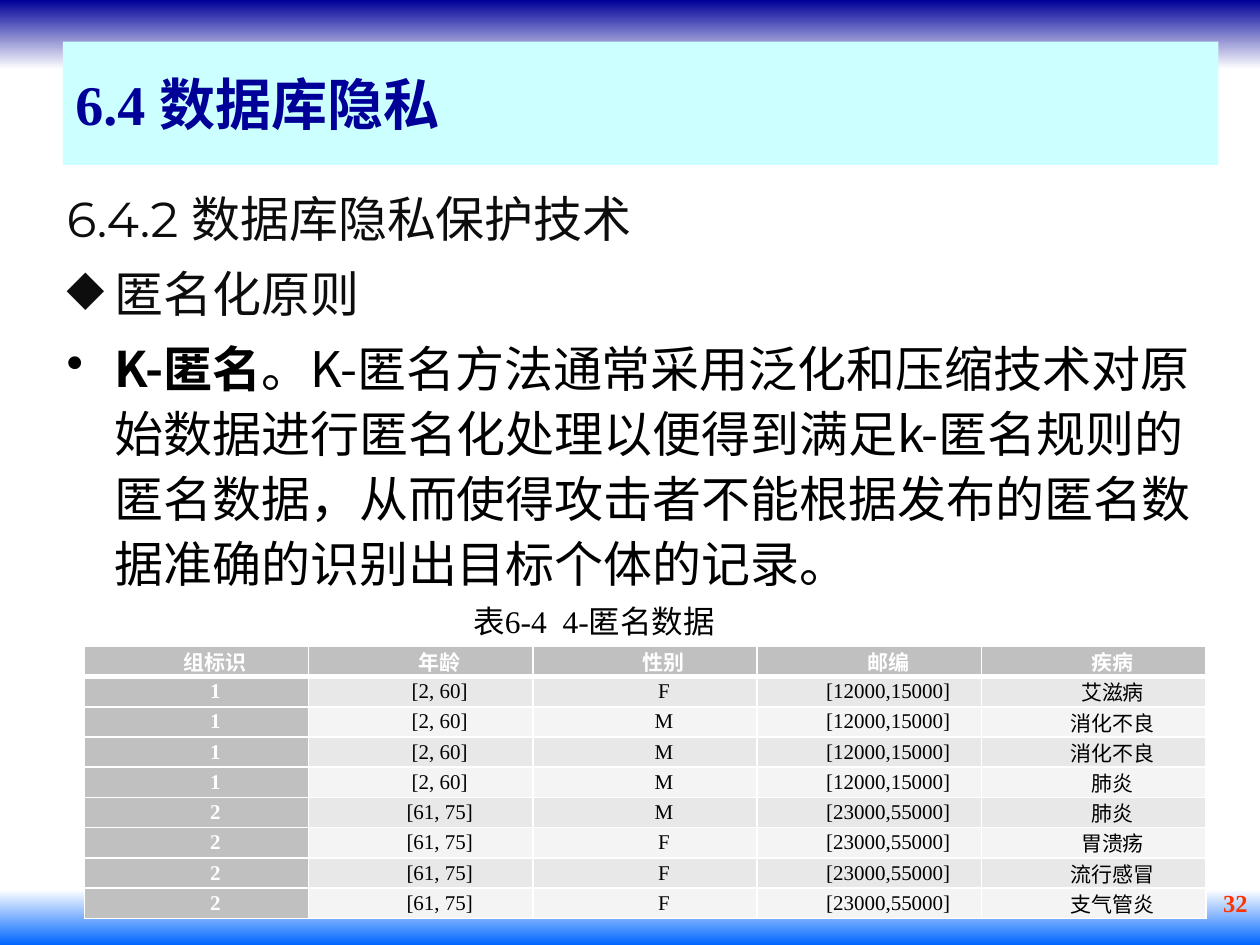
from pptx import Presentation
from pptx.util import Inches, Pt
from pptx.dml.color import RGBColor
from pptx.enum.shapes import MSO_SHAPE
from pptx.enum.text import MSO_ANCHOR, PP_ALIGN
from pptx.oxml.ns import qn
from lxml import etree

RECT = MSO_SHAPE.RECTANGLE
MIDDLE = MSO_ANCHOR.MIDDLE
CENTER, RIGHT = PP_ALIGN.CENTER, PP_ALIGN.RIGHT
SERIF, SANS, CJK = "Times New Roman", "Montserrat", "Noto Sans CJK SC"

prs = Presentation()
prs.slide_width, prs.slide_height = Inches(10), Inches(7.5)
COL, ROW = prs.slide_width / 100, prs.slide_height / 75
slide = prs.slides.add_slide(prs.slide_layouts[6])


def grid(left, top, width, height):
    return int(left * COL), int(top * ROW), int(width * COL), int(height * ROW)


def style(paragraph, face, size, color, bold=False):
    font = paragraph.font
    font.name, font.size, font.bold = face, Pt(size), bold
    font.color.rgb = RGBColor.from_string(color)


for top, height, colors in [(0, 5.5, ("000099", "FFFFFF")),
                            (70.6, 4.4, ("FFFFFF", "0066FF"))]:
    band = slide.shapes.add_shape(RECT, *grid(0, top, 100, height))
    band.shadow.inherit = False
    band.line.fill.background()
    band.fill.gradient()
    band.fill.gradient_angle = 270
    for stop, color in zip(band.fill.gradient_stops, colors):
        stop.color.rgb = RGBColor.from_string(color)

page = slide.shapes.add_textbox(*grid(70.5, 70, 29.5, 5)).text_frame
page.word_wrap = True
page.text = "32"
page.paragraphs[0].alignment = RIGHT
style(page.paragraphs[0], SERIF, 14, "FF3300", True)

title = slide.shapes.add_textbox(*grid(5, 3.3, 91.7, 9.8))
title.fill.solid()
title.fill.fore_color.rgb = RGBColor.from_string("CCFFFF")
title.text_frame.word_wrap = True
title.text_frame.vertical_anchor = MIDDLE
title.text_frame.text = "6.4 数据库隐私"
style(title.text_frame.paragraphs[0], SERIF, 32, "000099", True)

body = slide.shapes.add_textbox(*grid(4.3, 14, 93.9, 55.6)).text_frame
body.word_wrap = True
points = [
    ("", SANS, "0D0D0D", ["6.4.2 数据库隐私保护技术"]),
    ("◆", SANS, "0D0D0D", ["匿名化原则"]),
    ("•", CJK, "000000", [
        "K-匿名",
        "。K-匿名方法通常采用泛化和压缩技术对原始数据进行匿名化处理以便得到满足k-匿名规则的"
        "匿名数据，从而使得攻击者不能根据发布的匿名数据准确的识别出目标个体的记录。"]),
]
for index, (bullet, face, color, parts) in enumerate(points):
    point = body.add_paragraph() if index else body.paragraphs[0]
    point.line_spacing = Pt(37)
    point.space_before = Pt(6 if index else 0)
    if bullet:
        props = point._p.get_or_add_pPr()
        props.set("marL", str(Inches(0.38)))
        props.set("indent", str(-Inches(0.38)))
        etree.SubElement(props, qn("a:buChar"), char=bullet)
    style(point, face, 28, color)
    for part in parts:
        point.add_run().text = part
body.paragraphs[2].runs[0].font.bold = True

header = ["组标识", "年龄", "性别", "邮编", "疾病"]
groups = {"1": ("[2, 60]", "[12000,15000]"), "2": ("[61, 75]", "[23000,55000]")}
patients = [("1", "F", "艾滋病"), ("1", "M", "消化不良"), ("1", "M", "消化不良"),
            ("1", "M", "肺炎"), ("2", "M", "肺炎"), ("2", "F", "胃溃疡"),
            ("2", "F", "流行感冒"), ("2", "F", "支气管炎")]
records = [header] + [[group, groups[group][0], sex, groups[group][1], disease]
                      for group, sex, disease in patients]

table = slide.shapes.add_table(len(records), len(header),
                               *grid(6.7, 51.3, 89, 2.4 * len(records))).table
for r, record in enumerate(records):
    for c, value in enumerate(record):
        cell = table.cell(r, c)
        heading = r == 0 or c == 0
        cell.margin_top = cell.margin_bottom = 0
        cell.margin_left = cell.margin_right = Inches(0.08)
        cell.vertical_anchor = MIDDLE
        cell.text = value
        entry = cell.text_frame.paragraphs[0]
        entry.alignment = CENTER
        entry._p.get_or_add_pPr().set("indent", str(Inches(0.3)))
        style(entry, SERIF, 12, "FFFFFF" if heading else "000000", heading)
        for side in "LRTB":
            thick = (r, side) in [(0, "B"), (1, "T")]
            edge = etree.SubElement(cell._tc.get_or_add_tcPr(), qn("a:ln" + side),
                                    w=str(Pt(3 if thick else 1)))
            paint = etree.SubElement(edge, qn("a:solidFill"))
            etree.SubElement(paint, qn("a:srgbClr"), val="FFFFFF")
        cell.fill.solid()
        shade = "C0C0C0" if heading else "E8E8E8" if r % 2 else "F4F4F4"
        cell.fill.fore_color.rgb = RGBColor.from_string(shade)

caption = slide.shapes.add_textbox(*grid(23.2, 47.3, 44.9, 4)).text_frame
caption.word_wrap = True
caption.vertical_anchor = MIDDLE
caption.text = "表6-4  4-匿名数据"
caption.paragraphs[0].alignment = CENTER
caption.paragraphs[0]._p.get_or_add_pPr().set("indent", str(Inches(0.3)))
style(caption.paragraphs[0], SERIF, 18, "000000")

prs.save("out.pptx")
